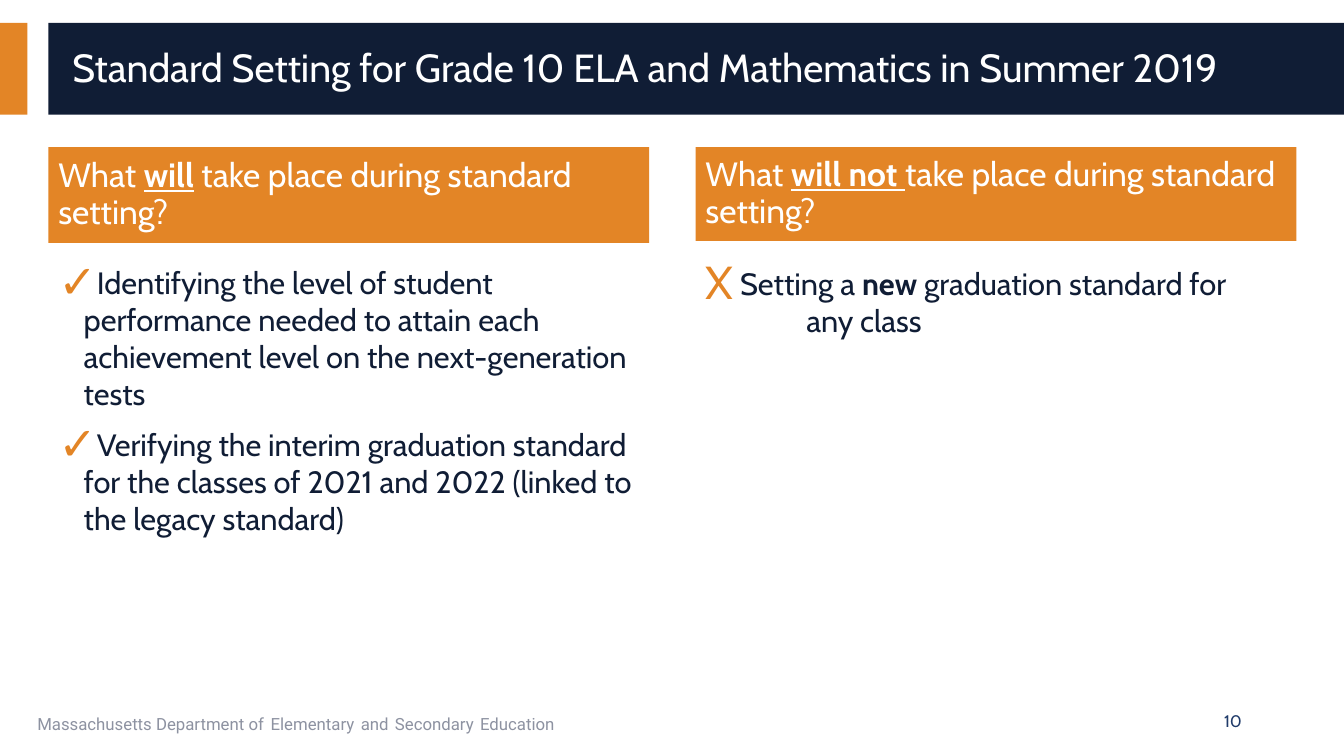
"""Build the standard-setting slide with two headed columns."""
from dataclasses import dataclass

from pptx import Presentation
from pptx import util as u
from pptx.dml.color import RGBColor
from pptx.enum import shapes, text
from pptx.oxml.xmlchemy import OxmlElement

NAVY = RGBColor(0x10, 0x1D, 0x35)
ORANGE = RGBColor(0xE3, 0x85, 0x26)
WHITE = RGBColor(0xFF, 0xFF, 0xFF)
BLUE = RGBColor(0x20, 0x3B, 0x6A)
GREY = RGBColor(0x8D, 0x92, 0xA1)
COLUMN_WIDTH = 15.14
HEADING_TOP = 3.71
BULLET_INDENT = 0.64


@dataclass(frozen=True)
class Run:
    """Words with their emphasis and an optional own size."""
    words: str
    bold: bool = False
    underline: bool = False
    size: float | None = None


@dataclass(frozen=True)
class Item:
    """A paragraph with an optional bullet, left margin and space before."""
    runs: tuple[Run, ...]
    bullet: str = ""
    margin: float = 0
    before: float = 0


@dataclass(frozen=True)
class Column:
    """A heading band and the points below it."""
    left: float
    heading_height: float
    heading: tuple[Run, ...]
    points_top: float
    points: tuple[Item, ...]


COLUMNS = (
    Column(1.22, 2.41,
           (Run("What "), Run("will", True, True), Run(" take place during standard setting?")),
           6.53,
           (Item((Run("Identifying the level of student performance needed to attain each "
                      "achievement level on the next-generation tests"),), "✓", BULLET_INDENT),
            Item((Run("Verifying the interim graduation standard for the classes of 2021 "
                      "and 2022 (linked to the legacy standard)"),), "✓", BULLET_INDENT, 10))),
    Column(17.53, 2.36,
           (Run("What "), Run("will not", True, True), Run(" ", underline=True),
            Run("take place during standard setting?")),
           6.55,
           (Item((Run(" Setting a"), Run(" new ", True), Run("graduation standard for")),
                 "X", BULLET_INDENT),
            Item((Run("any class"),), margin=2.54))),
)
FOOTER = (Run("Massachusetts Department of"), Run(" ", size=18), Run("Elementary"),
          Run(" ", size=18), Run("and"), Run(" ", size=18), Run("Secondary"),
          Run(" ", size=18), Run("Education"))


def add_bullet(paragraph, symbol: str) -> None:
    """Give a paragraph a large orange bullet with a hanging indent."""
    properties = paragraph._p.get_or_add_pPr()
    properties.set("indent", str(-u.Cm(BULLET_INDENT)))
    colour = OxmlElement("a:buClr")
    shade = OxmlElement("a:srgbClr")
    shade.set("val", str(ORANGE))
    colour.append(shade)
    size = OxmlElement("a:buSzPct")
    size.set("val", "150000")
    face = OxmlElement("a:buFont")
    face.set("typeface", "Cabin")
    character = OxmlElement("a:buChar")
    character.set("char", symbol)
    properties.extend((colour, size, face, character))


def write(shape, items: tuple[Item, ...], *, size: float, colour: RGBColor,
          font: str = "Cabin", align=text.PP_ALIGN.LEFT,
          anchor=text.MSO_ANCHOR.MIDDLE, spacing: float | None = None) -> None:
    """Fill a shape with formatted paragraphs."""
    frame = shape.text_frame
    frame.word_wrap = True
    frame.auto_size = text.MSO_AUTO_SIZE.NONE
    frame.vertical_anchor = anchor
    for index, item in enumerate(items):
        paragraph = frame.add_paragraph() if index else frame.paragraphs[0]
        if item.margin:
            paragraph._p.get_or_add_pPr().set("marL", str(u.Cm(item.margin)))
        if item.bullet:
            add_bullet(paragraph, item.bullet)
        paragraph.alignment = align
        if spacing:
            paragraph.line_spacing = spacing
        if index:
            paragraph.space_before = u.Pt(item.before)
        for part in item.runs:
            run = paragraph.add_run()
            run.text = part.words
            run.font.name = font
            run.font.size = u.Pt(part.size or size)
            run.font.bold = part.bold
            run.font.underline = part.underline
            run.font.color.rgb = colour


def add_band(slide, left: float, top: float, width: float, height: float, colour: RGBColor):
    """Add a plain filled rectangle."""
    band = slide.shapes.add_shape(shapes.MSO_SHAPE.RECTANGLE,
                                  u.Cm(left), u.Cm(top), u.Cm(width), u.Cm(height))
    band.shadow.inherit = False
    band.fill.solid()
    band.fill.fore_color.rgb = colour
    band.line.fill.background()
    return band


def add_box(slide, left: float, top: float, width: float, height: float):
    """Add an empty text box."""
    return slide.shapes.add_textbox(u.Cm(left), u.Cm(top), u.Cm(width), u.Cm(height))


def add_title(slide, words: str) -> None:
    """Place the title in front of its navy band."""
    title = slide.shapes.title
    title.left, title.top = u.Cm(1.57), u.Cm(0.81)
    title.width, title.height = u.Cm(31.75), u.Cm(1.88)
    write(title, (Item((Run(words),)),), size=28, colour=WHITE, spacing=0.9)
    slide.shapes._spTree.append(title._element)


def add_column(slide, column: Column) -> None:
    """Draw one heading band with its points."""
    heading = add_band(slide, column.left, HEADING_TOP, COLUMN_WIDTH,
                       column.heading_height, ORANGE)
    write(heading, (Item(column.heading),), size=24, colour=WHITE, spacing=0.9)
    points = add_box(slide, column.left, column.points_top, COLUMN_WIDTH, 10.54)
    write(points, column.points, size=22, colour=NAVY, anchor=text.MSO_ANCHOR.TOP)


def main() -> None:
    """Build and save the slide."""
    deck = Presentation()
    deck.slide_width, deck.slide_height = u.Cm(33.87), u.Cm(19.05)
    slide = deck.slides.add_slide(deck.slide_layouts[5])
    add_band(slide, 0, 0.58, 0.69, 2.31, ORANGE)
    add_band(slide, 1.22, 0.58, 32.65, 2.31, NAVY)
    add_title(slide, "Standard Setting for Grade 10 ELA and Mathematics in Summer 2019")
    for column in COLUMNS:
        add_column(slide, column)
    footer = add_box(slide, 0.69, 17.65, 21.44, 1.02)
    write(footer, (Item(FOOTER),), size=12, colour=GREY, font="Roboto",
          anchor=text.MSO_ANCHOR.TOP)
    number = add_box(slide, 23.93, 17.65, 7.62, 1.02)
    write(number, (Item((Run("10"),)),), size=12, colour=BLUE, align=text.PP_ALIGN.RIGHT)
    deck.save("out.pptx")


if __name__ == "__main__":
    main()
